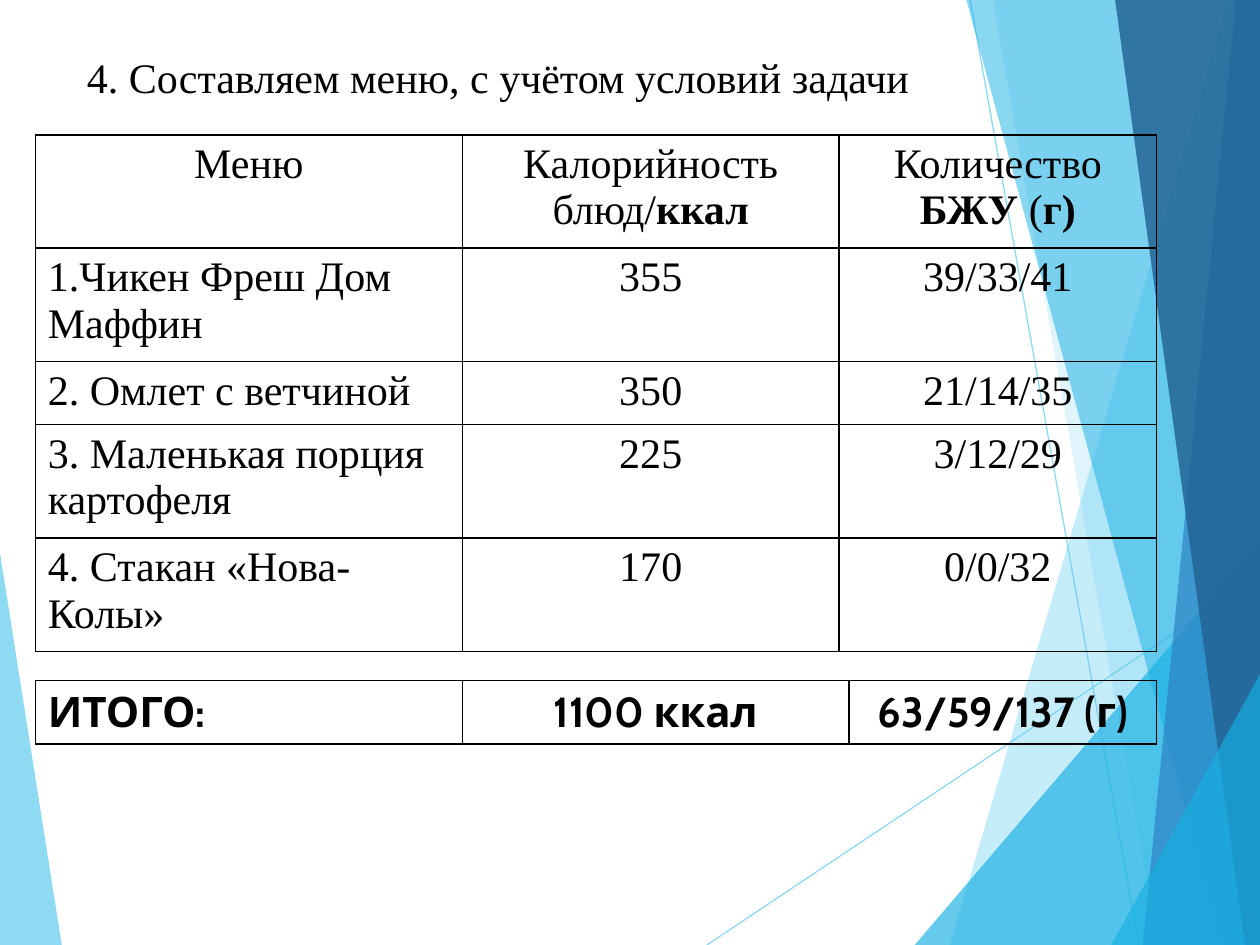
import pptx
import pptx.util
import pptx.oxml
import pptx.oxml.ns
import pptx.dml.color
import pptx.enum.text
import pptx.enum.shapes
from pptx.util import Inches

COLORS = {"sky": "5FCBEF", "cyan": "17B0E4", "blue": "2E83C3",
          "navy": "226292", "black": "000000"}
SERIF, SANS = "Times New Roman", "Cabin"
LEFT, CENTER = pptx.enum.text.PP_ALIGN.LEFT, pptx.enum.text.PP_ALIGN.CENTER

TITLE = "4. Составляем меню, с учётом условий задачи"

# A cell is a list of paragraphs; a paragraph is a list of (text, bold) runs
MENU_HEADER = [
    [[("Меню", False)]],
    [[("Калорийность блюд/", False), ("ккал", True)]],
    [[("Количество", False)],
     [("БЖУ", True), (" (", False), ("г)", True)]],
]
DISHES = [
    ("1.Чикен Фреш Дом Маффин", "355", "39/33/41"),
    ("2. Омлет с ветчиной", "350", "21/14/35"),
    ("3. Маленькая порция картофеля", "225", "3/12/29"),
    ("4. Стакан «Нова-Колы»", "170", "0/0/32"),
]
TOTALS = ("ИТОГО:", "1100 ккал", "63/59/137 (г)")

# Decoration: color, opacity in percent, corner points in inches
LEFT_WEDGE = ("sky", 70, [(0, 4.39), (0.49, 7.5), (0, 7.5)])
RIGHT_WEDGES = [
    ("sky", 36, [(9.75, 0), (7.54, 7.5), (10, 7.5), (10, 0)]),
    ("sky", 20, [(7.88, 0), (9.19, 7.5), (10, 7.5), (10, 0)]),
    ("cyan", 66, [(7.26, 7.5), (10, 4.29), (10, 7.5)]),
    ("cyan", 50, [(7.67, 0), (9.7, 7.5), (10, 7.5), (10, 0)]),
    ("blue", 70, [(9.81, 0), (9.07, 7.5), (10, 7.5), (10, 0)]),
    ("navy", 82, [(8.85, 0), (9.88, 7.5), (10, 7.5), (10, 0)]),
    ("cyan", 66, [(8.82, 7.5), (10, 5.35), (10, 7.5)]),
]
RAYS = [((5.61, 7.5), (10, 4.57)), ((7.7, 0), (9.04, 7.5))]


def rgb(name):
    return pptx.dml.color.RGBColor.from_string(COLORS[name])


def set_opacity(shape, percent):
    for color in shape._element.spPr.iter(pptx.oxml.ns.qn("a:srgbClr")):
        color.append(pptx.oxml.parse_xml(
            f'<a:alpha {pptx.oxml.ns.nsdecls("a")} val="{percent * 1000}"/>'))


def add_wedge(page, color, opacity, points):
    corners = [(Inches(x), Inches(y)) for x, y in points]
    builder = page.shapes.build_freeform(*corners[0])
    builder.add_line_segments(corners[1:], close=True)
    wedge = builder.convert_to_shape()
    wedge.shadow.inherit = False
    wedge.fill.solid()
    wedge.fill.fore_color.rgb = rgb(color)
    wedge.line.fill.background()
    set_opacity(wedge, opacity)


def add_ray(page, start, end):
    ray = page.shapes.add_connector(
        pptx.enum.shapes.MSO_CONNECTOR.STRAIGHT,
        *[Inches(value) for value in start + end])
    ray.line.color.rgb = rgb("sky")
    ray.line.width = pptx.util.Pt(0.75)
    set_opacity(ray, 70)
    ray._element.spPr.append(pptx.oxml.parse_xml(
        f'<a:effectLst {pptx.oxml.ns.nsdecls("a")}/>'))


def add_span(para, text, font_name, bold):
    span = para.add_run()
    span.text = text
    span.font.color.rgb = rgb("black")
    values = {"name": font_name, "size": pptx.util.Pt(24), "bold": bold}
    for name, value in values.items():
        setattr(span.font, name, value)


def add_borders(cell):
    properties = cell._tc.get_or_add_tcPr()
    for side in ("lnL", "lnR", "lnT", "lnB"):
        properties.append(pptx.oxml.parse_xml(
            f'<a:{side} {pptx.oxml.ns.nsdecls("a")} w="12700"><a:solidFill>'
            f'<a:srgbClr val="{COLORS["black"]}"/></a:solidFill></a:{side}>'))


def plain_row(texts, bold):
    return [[[(text, bold)]] for text in texts]


def add_grid(page, top, widths, heights, rows, font_name, header_rows=0):
    frame = page.shapes.add_table(
        len(rows), len(widths), Inches(0.28), Inches(top),
        Inches(sum(widths)), Inches(sum(heights)))
    table = frame.table
    table.first_row = table.horz_banding = False
    for column, width in zip(table.columns, widths):
        column.width = Inches(width)
    for row, height in zip(table.rows, heights):
        row.height = Inches(height)
    for r, row in enumerate(rows):
        for c, paragraphs in enumerate(row):
            cell = table.cell(r, c)
            add_borders(cell)
            cell.fill.background()
            for i, spans in enumerate(paragraphs):
                text_frame = cell.text_frame
                para = text_frame.add_paragraph() if i else text_frame.paragraphs[0]
                para.alignment = LEFT if c == 0 and r >= header_rows else CENTER
                for text, bold in spans:
                    add_span(para, text, font_name, bold)


def add_title(page):
    title = page.shapes.title
    box = {"left": 0.59, "top": 0.36, "width": 8.58, "height": 0.5}
    for name, value in box.items():
        setattr(title, name, Inches(value))
    frame = title.text_frame
    values = {"word_wrap": True,
              "auto_size": pptx.enum.text.MSO_AUTO_SIZE.NONE,
              "vertical_anchor": pptx.enum.text.MSO_ANCHOR.TOP}
    for name, value in values.items():
        setattr(frame, name, value)
    para = frame.paragraphs[0]
    para.alignment = LEFT
    add_span(para, TITLE, SERIF, False)
    # Bring the title in front of the decoration
    page.shapes._spTree.append(title._element)


def main():
    deck = pptx.Presentation()
    deck.slide_width, deck.slide_height = Inches(10), Inches(7.5)
    page = deck.slides.add_slide(deck.slide_layouts[5])

    # Background decoration
    add_wedge(page, *LEFT_WEDGE)
    for start, end in RAYS:
        add_ray(page, start, end)
    for wedge in RIGHT_WEDGES:
        add_wedge(page, *wedge)

    add_title(page)

    # Menu and totals
    menu = [MENU_HEADER] + [plain_row(dish, False) for dish in DISHES]
    add_grid(page, 1.07, (3.39, 2.99, 2.52), (0.9, 0.9, 0.5, 0.9, 0.9),
             menu, SERIF, header_rows=1)
    add_grid(page, 5.4, (3.39, 3.07, 2.44), (0.5,),
             [plain_row(TOTALS, True)], SANS)

    deck.save("out.pptx")


if __name__ == "__main__":
    main()
